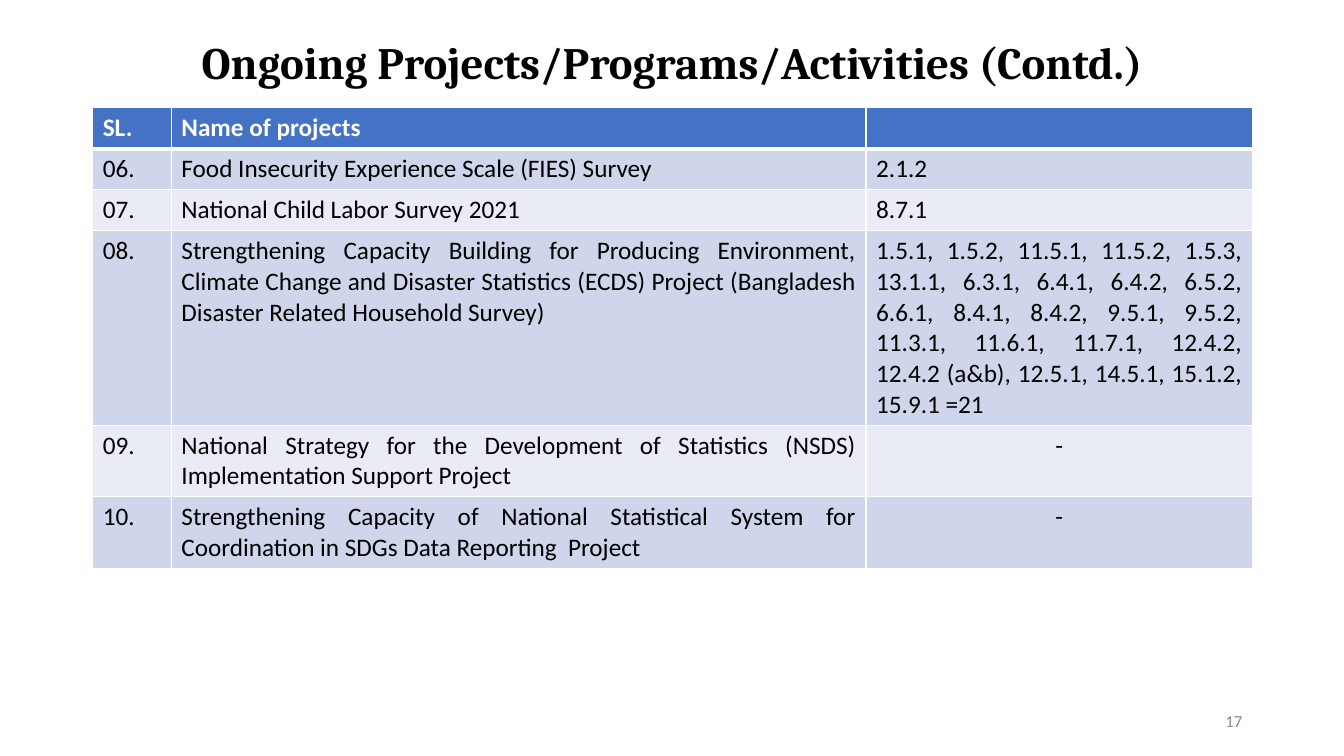
import pptx
import pptx.dml.color
import pptx.enum.text
import pptx.oxml.ns
import pptx.util
from lxml import etree

ALIGN = pptx.enum.text.PP_ALIGN
ANCHOR = pptx.enum.text.MSO_ANCHOR
WIDTH, HEIGHT = 13.33, 7.5
MARGIN = 0.92
CONTENT_WIDTH = 11.5

TITLE = "Ongoing Projects/Programs/Activities (Contd.)"
PAGE_NUMBER = "17"
HEADER = ("SL.", "Name of projects", "")
PROJECTS = [
    ("06.", "Food Insecurity Experience Scale (FIES) Survey", "2.1.2"),
    ("07.", "National Child Labor Survey 2021", "8.7.1"),
    ("08.", "Strengthening Capacity Building for Producing Environment, "
     "Climate Change and Disaster Statistics (ECDS) Project "
     "(Bangladesh Disaster Related Household Survey)",
     "1.5.1, 1.5.2, 11.5.1, 11.5.2, 1.5.3, 13.1.1, 6.3.1, 6.4.1, 6.4.2, "
     "6.5.2, 6.6.1, 8.4.1, 8.4.2, 9.5.1, 9.5.2, 11.3.1, 11.6.1, 11.7.1, "
     "12.4.2, 12.4.2 (a&b), 12.5.1, 14.5.1, 15.1.2, 15.9.1 =21"),
    ("09.", "National Strategy for the Development of Statistics (NSDS) "
     "Implementation Support Project", "-"),
    ("10.", "Strengthening Capacity of National Statistical System for "
     "Coordination in SDGs Data Reporting  Project", "-"),
]
COLUMN_WIDTHS = (0.78, 6.89, 3.83)
LINES_PER_ROW = (1, 1, 1, 6, 2, 2)
LINE_HEIGHT, ROW_PADDING = 0.3, 0.1
HEADER_FILL = "4472C4"
BAND_FILLS = ("CFD5EA", "E9EBF5")


def color(value):
    return pptx.dml.color.RGBColor.from_string(value)


def inches(*lengths):
    return [pptx.util.Inches(length) for length in lengths]


def write(tf, text, size, font, ink, align, bold=False):
    tf.text = text
    p = tf.paragraphs[0]
    p.alignment = align
    for f in [p.font] + [r.font for r in p.runs]:
        f.size, f.name, f.bold = pptx.util.Pt(size), font, bold
        f.color.rgb = color(ink)
    return p


def set_borders(cell, bottom):
    """Draw white cell borders, 1 pt wide except for the bottom one."""
    tcPr = cell._tc.get_or_add_tcPr()
    qn = pptx.oxml.ns.qn
    for i, (side, width) in enumerate(
            (("lnL", 1), ("lnR", 1), ("lnT", 1), ("lnB", bottom))):
        ln = etree.Element(qn("a:" + side), w=str(pptx.util.Pt(width)))
        fill = etree.SubElement(ln, qn("a:solidFill"))
        etree.SubElement(fill, qn("a:srgbClr"), val="FFFFFF")
        tcPr.insert(i, ln)


def add_title(s):
    title = s.shapes.title
    title.left, title.top, title.width, title.height = inches(
        MARGIN, 0.4, CONTENT_WIDTH, 0.48)
    tf = title.text_frame
    p = write(tf, TITLE, 32, "Cambria", "000000", ALIGN.CENTER, True)
    p.line_spacing = 0.9
    tf.vertical_anchor = ANCHOR.MIDDLE
    tf.auto_size = pptx.enum.text.MSO_AUTO_SIZE.NONE


def add_project_table(s):
    rows = [HEADER] + PROJECTS
    heights = [n * LINE_HEIGHT + ROW_PADDING for n in LINES_PER_ROW]
    table = s.shapes.add_table(len(rows), len(HEADER), *inches(
        MARGIN, 1.07, CONTENT_WIDTH, sum(heights))).table
    for column, width in zip(table.columns, inches(*COLUMN_WIDTHS)):
        column.width = width
    for row, height in zip(table.rows, inches(*heights)):
        row.height = height
    for i, row in enumerate(rows):
        header = i == 0
        for j, text in enumerate(row):
            cell = table.cell(i, j)
            if header or j == 0:
                align = ALIGN.LEFT
            else:
                align = ALIGN.CENTER if text == "-" else ALIGN.JUSTIFY
            write(cell.text_frame, text, 18, "Calibri",
                  "FFFFFF" if header else "000000", align, header)
            cell.fill.solid()
            cell.fill.fore_color.rgb = color(
                HEADER_FILL if header else BAND_FILLS[(i - 1) % 2])
            set_borders(cell, 3 if header else 1)


def add_page_number(s):
    width = 3
    box = s.shapes.add_textbox(*inches(
        MARGIN + CONTENT_WIDTH - width, 6.95, width, 0.4))
    tf = box.text_frame
    tf.word_wrap = True
    tf.vertical_anchor = ANCHOR.MIDDLE
    write(tf, PAGE_NUMBER, 12, "Calibri", "8C8C8C", ALIGN.RIGHT)


def main():
    prs = pptx.Presentation()
    prs.slide_width, prs.slide_height = inches(WIDTH, HEIGHT)
    s = prs.slides.add_slide(prs.slide_layouts.get_by_name("Title Only"))
    add_title(s)
    add_project_table(s)
    add_page_number(s)
    prs.save("out.pptx")


if __name__ == "__main__":
    main()
